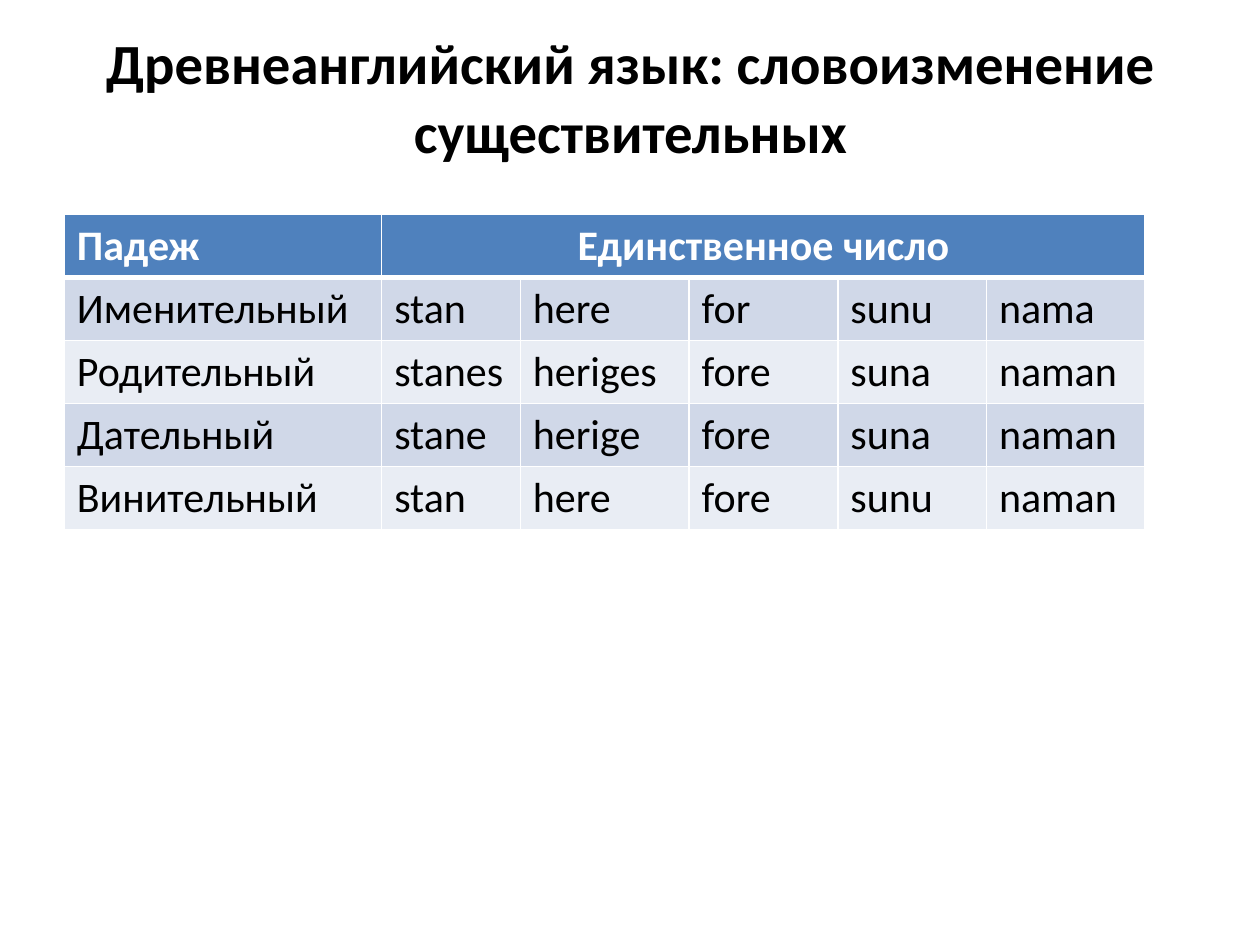
from lxml import etree
from pptx import Presentation
from pptx.dml.color import RGBColor
from pptx.enum.text import MSO_ANCHOR, PP_ALIGN
from pptx.oxml.ns import qn
from pptx.util import Inches, Pt

CENTER, LEFT = PP_ALIGN.CENTER, PP_ALIGN.LEFT
MIDDLE = MSO_ANCHOR.MIDDLE

TITLE = "Древнеанглийский язык: словоизменение существительных"
HEADINGS = ["Падеж", "Единственное число"]
DECLENSION = [
    ["Именительный", "stan", "here", "for", "sunu", "nama"],
    ["Родительный", "stanes", "heriges", "fore", "suna", "naman"],
    ["Дательный", "stane", "herige", "fore", "suna", "naman"],
    ["Винительный", "stan", "here", "fore", "sunu", "naman"],
]
COLUMN_WIDTHS = [2.52, 1.1, 1.34, 1.18, 1.18, 1.26]
ROW_HEIGHT = 0.41

THEME = {
    "font": "Calibri",
    "title_size": 32.4,
    "table_size": 24,
    "text": "000000",
    "header_text": "FFFFFF",
    "header_fill": "4F81BD",
    "bands": ["D0D8E8", "E9EDF4"],
    "border": "FFFFFF",
    "border_width": 1,
    "header_rule": 3,
}


def write(frame, text, size, color, bold, align):
    frame.text = text
    paragraph = frame.paragraphs[0]
    paragraph.alignment = align
    font = paragraph.runs[0].font
    font.name, font.size, font.bold = THEME["font"], Pt(size), bold
    font.color.rgb = RGBColor.from_string(color)


def add_borders(cell, top, bottom):
    thin = THEME["border_width"]
    properties = cell._tc.get_or_add_tcPr()
    for side, width in (("L", thin), ("R", thin), ("T", top), ("B", bottom)):
        line = etree.SubElement(properties, qn(f"a:ln{side}"), w=str(Pt(width)))
        fill = etree.SubElement(line, qn("a:solidFill"))
        etree.SubElement(fill, qn("a:srgbClr"), val=THEME["border"])


def add_title(slide):
    box = slide.shapes.add_textbox(Inches(0.51), Inches(0.3), Inches(8.99), Inches(0.93))
    frame = box.text_frame
    frame.word_wrap = True
    frame.vertical_anchor = MIDDLE
    write(frame, TITLE, THEME["title_size"], THEME["text"], True, CENTER)


def add_declension(slide):
    rows = [HEADINGS] + DECLENSION
    table = slide.shapes.add_table(
        len(rows), len(COLUMN_WIDTHS), Inches(0.51), Inches(1.7),
        Inches(sum(COLUMN_WIDTHS)), Inches(ROW_HEIGHT * len(rows)),
    ).table
    for column, width in zip(table.columns, COLUMN_WIDTHS):
        column.width = Inches(width)
    table.cell(0, 1).merge(table.cell(0, len(COLUMN_WIDTHS) - 1))

    thin, thick = THEME["border_width"], THEME["header_rule"]
    for r, words in enumerate(rows):
        header = r == 0
        fill = THEME["header_fill"] if header else THEME["bands"][(r - 1) % 2]
        color = THEME["header_text"] if header else THEME["text"]
        for c in range(len(COLUMN_WIDTHS)):
            cell = table.cell(r, c)
            add_borders(cell, thick if r == 1 else thin, thick if header else thin)
            cell.fill.solid()
            cell.fill.fore_color.rgb = RGBColor.from_string(fill)
            if c < len(words):
                align = CENTER if header and c else LEFT
                write(cell.text_frame, words[c], THEME["table_size"], color, header, align)


def main():
    """Build the slide on Old English noun declension."""
    deck = Presentation()
    deck.slide_width, deck.slide_height = Inches(10), Inches(7.5)
    slide = deck.slides.add_slide(deck.slide_layouts[6])
    add_title(slide)
    add_declension(slide)
    deck.save("out.pptx")


if __name__ == "__main__":
    main()
